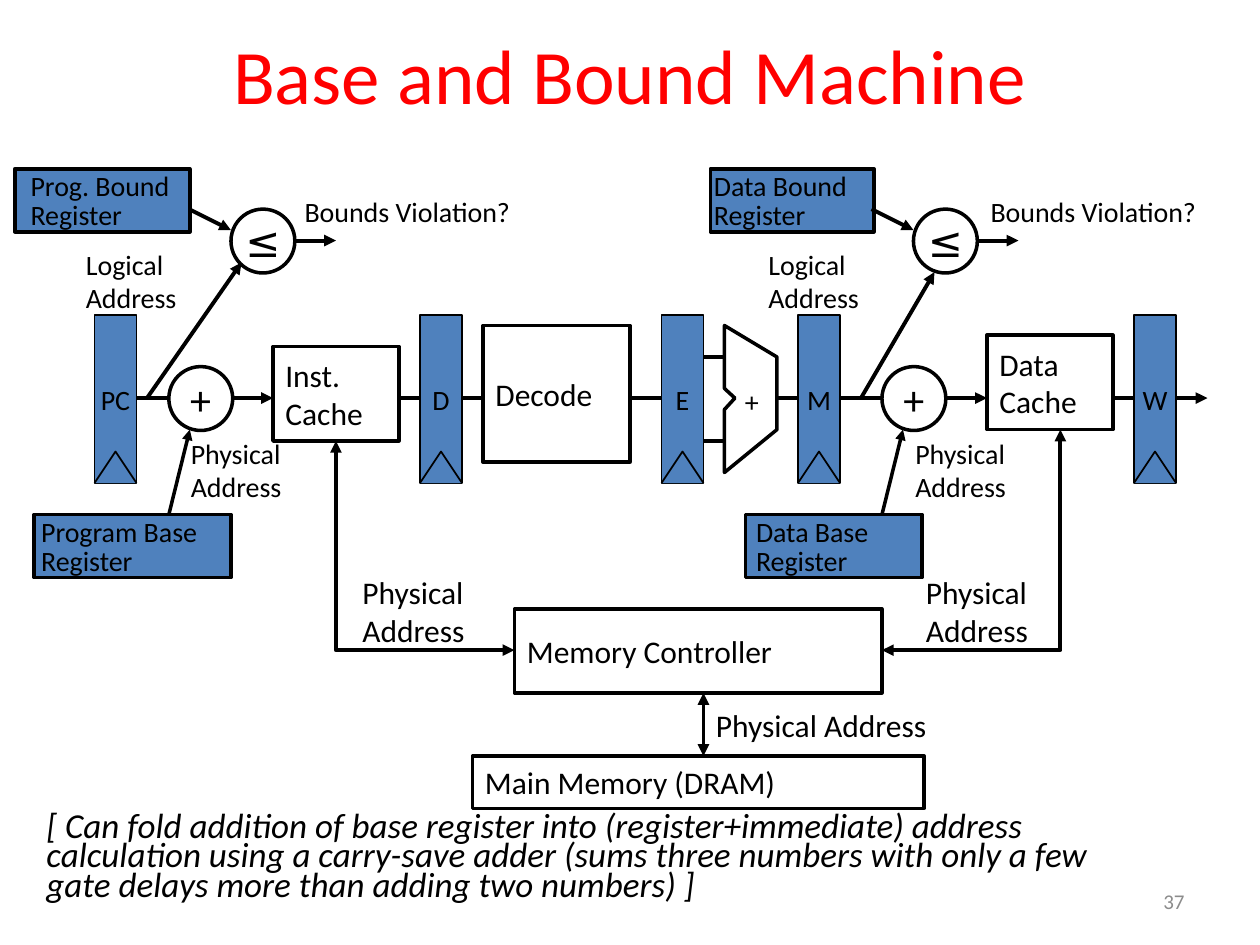
from lxml import etree
from pptx import Presentation
from pptx.dml.color import RGBColor
from pptx.enum.shapes import MSO_CONNECTOR, MSO_SHAPE
from pptx.enum.text import MSO_ANCHOR, PP_ALIGN
from pptx.oxml.ns import qn
from pptx.util import Pt

LEFT, CENTER, RIGHT = PP_ALIGN.LEFT, PP_ALIGN.CENTER, PP_ALIGN.RIGHT
TOP, MIDDLE = MSO_ANCHOR.TOP, MSO_ANCHOR.MIDDLE
RECT, OVAL = MSO_SHAPE.RECTANGLE, MSO_SHAPE.OVAL
STRAIGHT = MSO_CONNECTOR.STRAIGHT

FONT, SYMBOL_FONT = "Calibri", "DejaVu Sans"
BLACK, WHITE, BLUE, RED, GREY = "000000", "FFFFFF", "4F81BD", "FF0000", "8C8C8C"
PIPE_Y = 227.5  # height of the pipeline's main wire


def color(hex_value):
    return RGBColor.from_string(hex_value)


def write(shape, text, size, align=LEFT, anchor=MIDDLE, insets=(7.2, 3.6),
          spacing=None, font=FONT, ink=BLACK, wrap=True, italic=False):
    frame = shape.text_frame
    frame.text = text
    frame.word_wrap = wrap
    frame.vertical_anchor = anchor
    frame.margin_left = frame.margin_right = Pt(insets[0])
    frame.margin_top = frame.margin_bottom = Pt(insets[1])
    paragraph = frame.paragraphs[0]
    paragraph.alignment = align
    if spacing:
        paragraph.line_spacing = spacing
    for run in paragraph.runs:
        run.font.name = font
        run.font.size = Pt(size)
        run.font.italic = italic
        run.font.color.rgb = color(ink)


def outline(shape, fill, weight):
    shape.shadow.inherit = False
    if fill:
        shape.fill.solid()
        shape.fill.fore_color.rgb = color(fill)
    else:
        shape.fill.background()
    shape.line.color.rgb = color(BLACK)
    shape.line.width = Pt(weight)


def label(slide, box, text, size, **style):
    write(slide.shapes.add_textbox(*map(Pt, box)), text, size, **style)


def block(slide, box, text, size=18, kind=RECT, fill=WHITE, weight=2, **style):
    shape = slide.shapes.add_shape(kind, *map(Pt, box))
    outline(shape, fill, weight)
    write(shape, text, size, **style)


def path_shape(slide, points, fill=None, weight=2.25, close=False):
    start, *rest = [(Pt(x), Pt(y)) for x, y in points]
    builder = slide.shapes.build_freeform(*start)
    builder.add_line_segments(rest, close=close)
    shape = builder.convert_to_shape()
    outline(shape, fill, weight)
    return shape


def arrowheads(shape, *ends):
    line = shape.line._get_or_add_ln()
    for end in ends:
        etree.SubElement(line, qn(f"a:{end}"), type="triangle")


def wire(slide, start, end, *ends, weight=2.25):
    connector = slide.shapes.add_connector(STRAIGHT, *map(Pt, start + end))
    connector.line.color.rgb = color(BLACK)
    connector.line.width = Pt(weight)
    arrowheads(connector, *ends)
    etree.SubElement(connector._element.spPr, qn("a:effectLst"))


def pipeline_register(slide, x, name):
    block(slide, (x, 180, 24, 96), name, 16, fill=BLUE, weight=1,
          align=CENTER, wrap=False)
    # Clock notch
    path_shape(slide, [(x, 276), (x + 12, 258), (x + 24, 276)], BLUE, 1)


def address_register(slide, box, text, inset):
    block(slide, box, text, 16, fill=BLUE, anchor=TOP, insets=(inset, 3),
          spacing=0.85)


def operator(slide, x, y, symbol, font=FONT):
    block(slide, (x, y, 36.5, 36.5), symbol, 24, OVAL, align=CENTER,
          wrap=False, font=font)


def base_and_bound(slide, bound, base, compare_x, adder_x, tap, logical_x,
                   physical_x, violation_x):
    """Bounds check above the pipeline and base addition on it."""
    bound_x, bound_width, bound_text, bound_inset = bound
    base_x, base_width, base_text, base_inset = base
    address_register(slide, (bound_x, 96.5, bound_width, 36), bound_text, bound_inset)
    address_register(slide, (base_x, 294, base_width, 36), base_text, base_inset)
    operator(slide, compare_x, 119.5, "≤", SYMBOL_FONT)
    operator(slide, adder_x, 209.5, "+")

    wire(slide, (adder_x, 294), (adder_x + 12, 245.5), "tailEnd", weight=2)
    wire(slide, *tap, "tailEnd")
    wire(slide, (compare_x - 24, 119.5), (compare_x, 131.5), "tailEnd")
    wire(slide, (compare_x + 36, 137.5), (compare_x + 60, 137.5), "tailEnd")

    label(slide, (logical_x, 137.5, 88, 46), "Logical Address", 16)
    label(slide, (physical_x, 245.5, 88, 46), "Physical Address", 16)
    label(slide, (violation_x, 108, 142, 25), "Bounds Violation?", 16,
          anchor=TOP, insets=(6, 3))


def draw_pipeline(slide):
    # Main wire, drawn behind the stages
    for x1, x2, *ends in [(444, 564, "tailEnd"), (636, 690, "tailEnd"),
                          (228, 378), (78, 156, "tailEnd")]:
        wire(slide, (x1, PIPE_Y), (x2, PIPE_Y), *ends)

    for x, name in [(54, "PC"), (240, "D"), (378, "E"), (456, "M"), (648, "W")]:
        pipeline_register(slide, x, name)

    block(slide, (156, 198, 72, 54), "Inst. Cache")
    block(slide, (276, 186, 84, 78), "Decode")
    block(slide, (564, 191.5, 72, 54), "Data Cache")

    # ALU with its two operands
    path_shape(slide, [(414, 186), (414, 222), (420, PIPE_Y), (414, 234),
                       (414, 270), (444, 245.5), (444, 204)], WHITE, 2, close=True)
    for y in (204, 252):
        wire(slide, (402, y), (414, y))
    label(slide, (418.5, 216, 27, 27), "+", 16, wrap=False)


def draw_memory(slide):
    block(slide, (270, 432, 258, 30), "Main Memory (DRAM)")
    block(slide, (294, 348, 210, 48), "Memory Controller")

    # Buses from the caches to the controller, then to memory
    for cache_x, cache_bottom, controller_x in [(606, 245.5, 504), (192, 252, 294)]:
        bus = path_shape(slide, [(cache_x, cache_bottom), (cache_x, 371.5),
                                 (controller_x, 371.5)])
        arrowheads(bus, "headEnd", "tailEnd")
    wire(slide, (402, 396), (402, 432), "headEnd", "tailEnd")

    for box in [(522, 324, 88, 50), (200, 324, 88, 50), (402, 399.5, 192, 29)]:
        label(slide, box, "Physical Address", 18)


def main():
    prs = Presentation()
    prs.slide_width, prs.slide_height = Pt(720), Pt(540)
    slide = prs.slides.add_slide(prs.slide_layouts[5])

    # Title
    title = slide.shapes.title
    title.left, title.top, title.width, title.height = map(Pt, (36, 8, 648, 68.5))
    write(title, "Base and Bound Machine", 44, align=CENTER, ink=RED)

    # Closing remark and page number
    label(slide, (19.5, 462, 626.5, 62.5),
          "[ Can fold addition of base register into (register+immediate) address "
          "calculation using a carry-save adder (sums three numbers with only a few "
          "gate delays more than adding two numbers) ]",
          20, anchor=TOP, spacing=0.7, italic=True)
    label(slide, (516, 500.5, 168, 29), "37", 12, align=RIGHT, ink=GREY)

    # Diagram
    draw_pipeline(slide)
    draw_memory(slide)
    base_and_bound(slide, bound=(406, 93.5, "Data Bound Register", 2),
                   base=(426, 101, "Data Base Register", 6),
                   compare_x=522, adder_x=504, tap=((492, PIPE_Y), (534, 155.5)),
                   logical_x=432, physical_x=516, violation_x=560)
    base_and_bound(slide, bound=(8.5, 100, "Prog. Bound Register", 9),
                   base=(19.5, 112.5, "Program Base Register", 4),
                   compare_x=132, adder_x=96.5, tap=((84, PIPE_Y), (138, 150)),
                   logical_x=42, physical_x=102, violation_x=168)

    prs.save("out.pptx")


if __name__ == "__main__":
    main()
